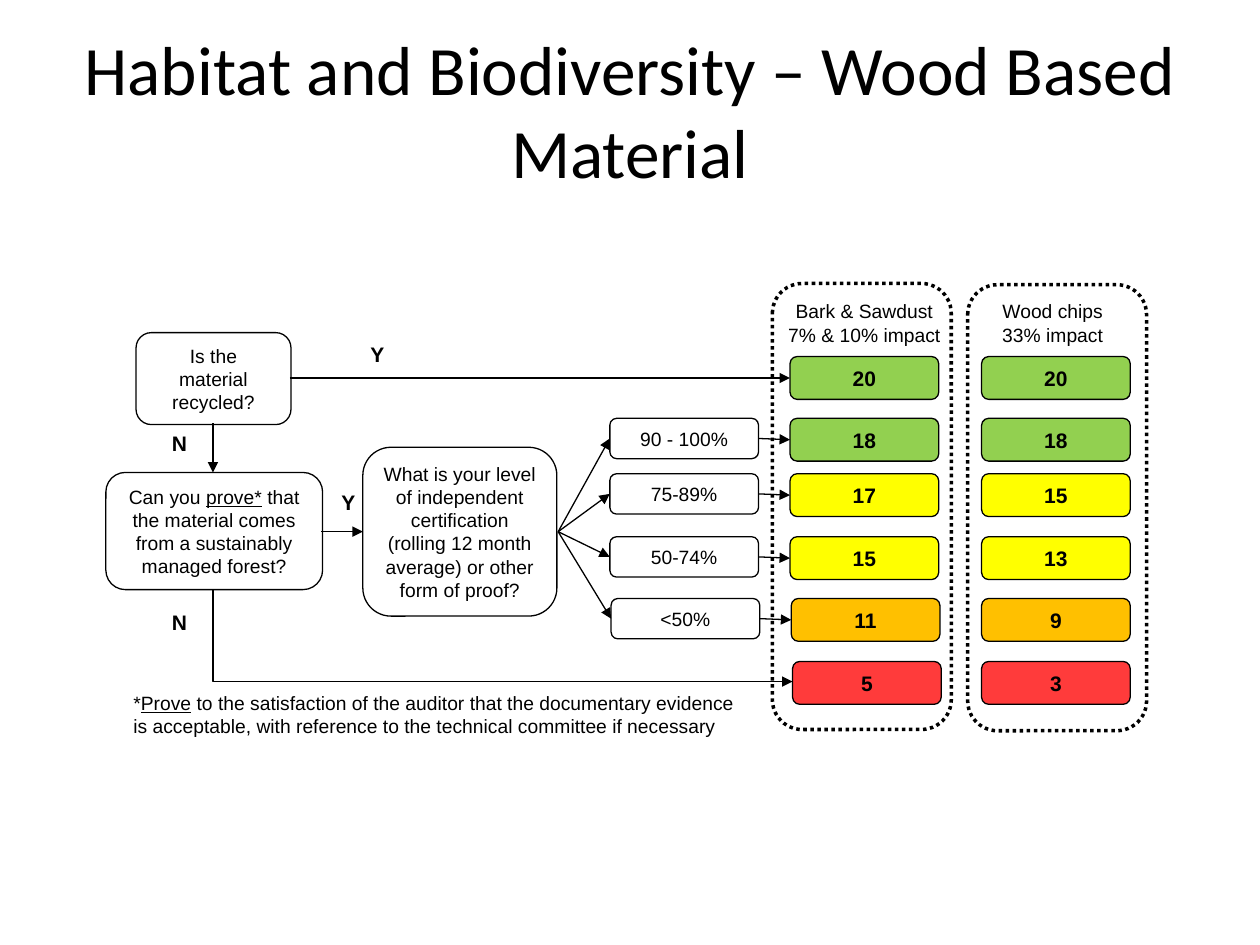
from pptx import Presentation
from pptx import util as u
from pptx.dml import color
from pptx.enum import dml, shapes, text
from pptx.oxml import ns
from lxml import etree

COLORS = {"black": "000000", "white": "FFFFFF", "green": "92D050",
          "yellow": "FFFF00", "orange": "FFC000", "red": "FF3B3B"}
COLS, ROWS = 100, 75


def rgb(name):
    return color.RGBColor.from_string(COLORS[name])


class FlowSlide:
    font, body, label, heading = "Arial", 11, 12, 39.6
    thin, thick = 0.75, 2

    def __init__(self, prs):
        self.s = prs.slides.add_slide(prs.slide_layouts[5])
        self.col = prs.slide_width / COLS
        self.row = prs.slide_height / ROWS

    def at(self, x, y, w, h):
        return (round(x * self.col), round(y * self.row),
                round(w * self.col), round(h * self.row))

    def fill_text(self, tf, words, size, bold=False, align=text.PP_ALIGN.CENTER, font=None):
        for i, line in enumerate(words.split("\n")):
            p = tf.add_paragraph() if i else tf.paragraphs[0]
            p.alignment = align
            for k, part in enumerate(line.split("_")):
                r = p.add_run()
                r.text = part
                r.font.name, r.font.size = font or self.font, u.Pt(size)
                r.font.bold, r.font.underline = bold, k % 2 == 1
                r.font.color.rgb = rgb("black")

    def title(self, words, *box):
        sp = self.s.shapes.title
        sp.left, sp.top, sp.width, sp.height = self.at(*box)
        self.fill_text(sp.text_frame, words, self.heading, font="Calibri")

    def note(self, words, *box, size=None, bold=False, wrap=True,
             align=text.PP_ALIGN.CENTER):
        tf = self.s.shapes.add_textbox(*self.at(*box)).text_frame
        tf.word_wrap = wrap
        self.fill_text(tf, words, size or self.body, bold, align)

    def mark(self, words, x, y):
        self.note(words, x, y, 3.9, 3, size=self.label, bold=True)

    def outline(self, kind, box, width):
        sp = self.s.shapes.add_shape(kind, *self.at(*box))
        sp.shadow.inherit = False
        sp.line.color.rgb, sp.line.width = rgb("black"), u.Pt(width)
        return sp

    def step(self, words, *box, fill="white", size=None, bold=False):
        sp = self.outline(shapes.MSO_SHAPE.FLOWCHART_ALTERNATE_PROCESS, box, self.thin)
        sp.fill.solid()
        sp.fill.fore_color.rgb = rgb(fill)
        tf = sp.text_frame
        tf.word_wrap = True
        tf.vertical_anchor = text.MSO_ANCHOR.MIDDLE
        self.fill_text(tf, words, size or self.body, bold)

    def score(self, words, x, y, fill):
        self.step(words, x, y, 11.8, 3.4, fill=fill, size=self.label, bold=True)

    def frame(self, *box):
        sp = self.outline(shapes.MSO_SHAPE.ROUNDED_RECTANGLE, box, self.thick)
        sp.fill.background()
        sp.line.dash_style = dml.MSO_LINE.ROUND_DOT

    def arrow(self, x1, y1, x2, y2, kind=shapes.MSO_CONNECTOR.STRAIGHT):
        c = self.s.shapes.add_connector(kind, *self.at(x1, y1, x2, y2))
        c.line.color.rgb, c.line.width = rgb("black"), u.Pt(self.thin)
        ln = c._element.spPr.find(ns.qn("a:ln"))
        etree.SubElement(ln, ns.qn("a:tailEnd"), type="triangle")
        etree.SubElement(c._element.spPr, ns.qn("a:effectLst"))
        return c

    def corner_arrow(self, x1, y1, x2, y2):
        w, h = x2 - x1, y2 - y1
        cx, cy = (x1 + x2) / 2, (y1 + y2) / 2
        c = self.arrow(cx + h / 2, cy - w / 2, cx - h / 2, cy + w / 2,
                       shapes.MSO_CONNECTOR.ELBOW)
        c._element.spPr.find(ns.qn("a:xfrm")).set("rot", str(270 * 60000))
        c._element.spPr.find(ns.qn("a:prstGeom")).set("prst", "bentConnector2")


LEVELS = [
    (28.3, 62.7, "green", "20", "20", None),
    (33.2, 62.7, "green", "18", "18", "90 - 100%"),
    (37.6, 62.7, "yellow", "17", "15", "75-89%"),
    (42.6, 62.7, "yellow", "15", "13", "50-74%"),
    (47.5, 62.8, "orange", "11", "9", "<50%"),
    (52.5, 62.9, "red", "5", "3", None),
]


def main():
    prs = Presentation()
    prs.slide_width, prs.slide_height = u.Inches(10), u.Inches(7.5)
    s = FlowSlide(prs)
    s.title("Habitat and Biodiversity – Wood Based Material", 5, 2.4, 90, 12.5)

    s.step("Is the material recycled?", 10.8, 26.4, 12.3, 7.3)
    s.step("Can you _prove*_ that the material comes from a sustainably "
           "managed forest?", 8.4, 37.5, 17.2, 9.3)
    s.step("What is your level of independent certification (rolling 12 month "
           "average) or other form of proof?", 28.8, 35.5, 15.4, 13.4)

    s.arrow(23, 30, 62.7, 30)
    s.arrow(16.9, 33.6, 16.9, 37.5)
    s.arrow(25.5, 42.2, 28.8, 42.2)
    s.corner_arrow(16.9, 46.8, 62.9, 54.1)
    for words, x, y in [("Y", 28, 26.6), ("N", 12.3, 33.7),
                        ("Y", 25.7, 38.4), ("N", 12.3, 47.9)]:
        s.mark(words, x, y)

    s.frame(61.3, 22.5, 14.2, 35.4)
    s.frame(76.8, 22.6, 14.2, 35.4)
    s.note("Bark & Sawdust\n7% & 10% impact", 61.5, 23.3, 14.2, 4.7, wrap=False)
    s.note("Wood chips\n33% impact", 78.5, 23.3, 10.1, 4.7, wrap=False)

    for y, x, fill, bark, chips, share in LEVELS:
        s.score(bark, x, y, fill)
        s.score(chips, 77.9, y, fill)
        if share:
            left = x - 14.3
            s.step(share, left, y, 11.8, 3.2)
            s.arrow(44.3, 42.2, left, y + 1.6)
            s.arrow(left + 11.8, y + 1.6, x, y + 1.7)

    s.note("*_Prove_ to the satisfaction of the auditor that the documentary evidence "
           "is acceptable, with reference to the technical committee if necessary",
           9.6, 54.4, 50.7, 4.7, align=text.PP_ALIGN.LEFT)
    prs.save("out.pptx")


if __name__ == "__main__":
    main()
